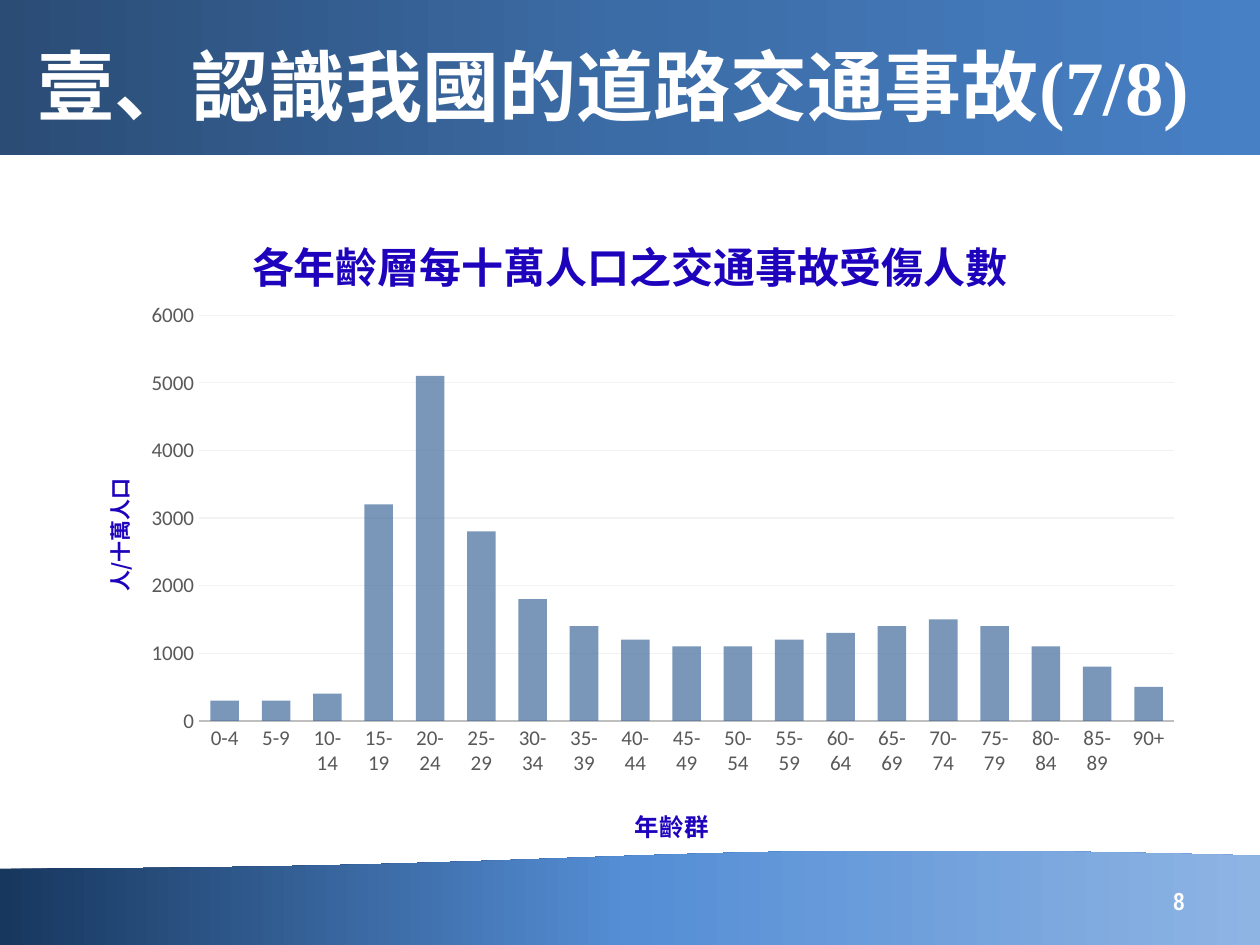
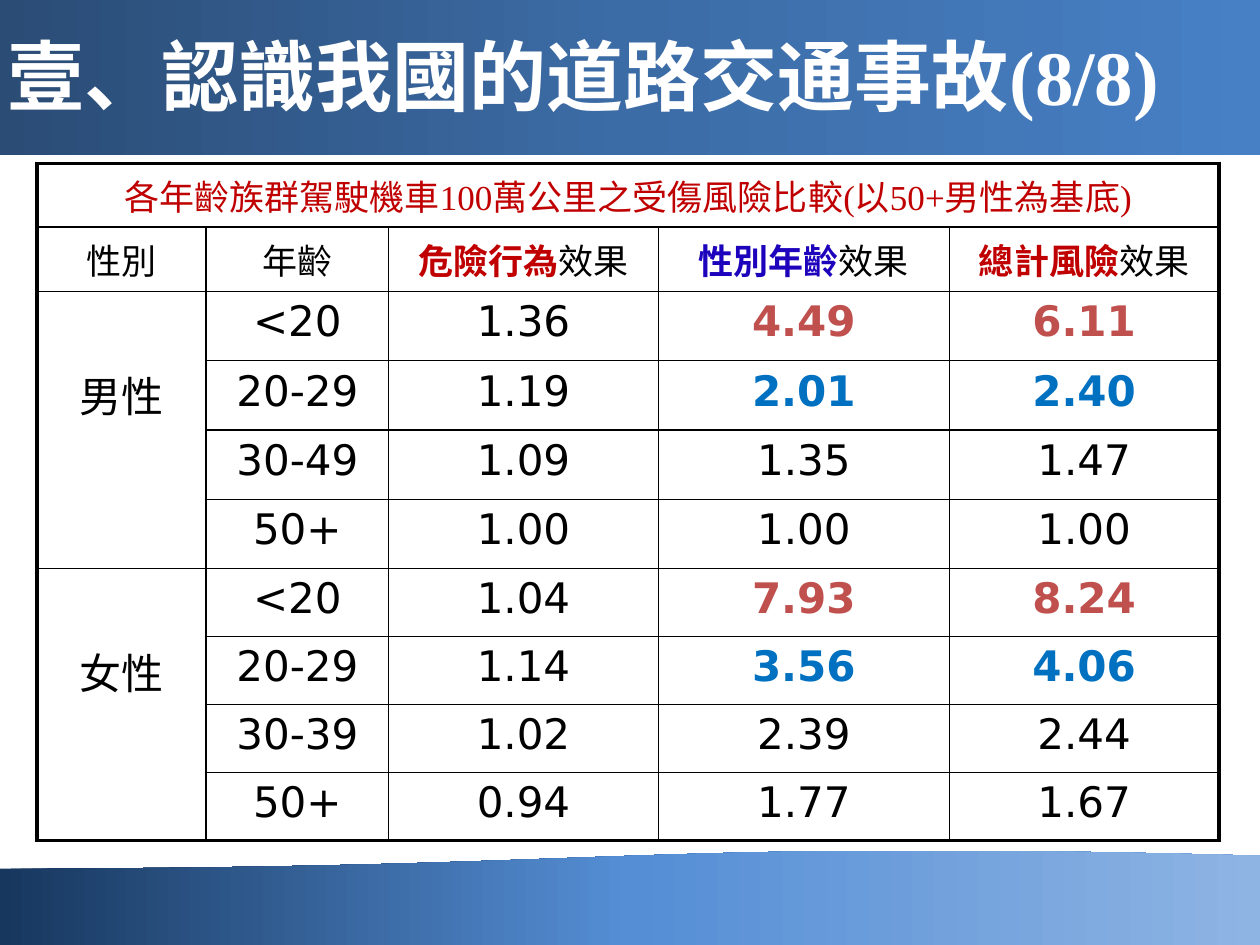
"""Build two slides on road accident injuries: a chart by age and a risk table."""
from pptx import Presentation
from pptx.chart.data import CategoryChartData as ChartData
from pptx.dml.color import RGBColor
from pptx.enum.chart import XL_CHART_TYPE as ChartType, XL_TICK_MARK as TickMark
from pptx.enum.shapes import MSO_SHAPE as Preset
from pptx.enum.text import MSO_ANCHOR as Anchor, MSO_AUTO_SIZE as AutoSize, PP_ALIGN as Align
from pptx.oxml import parse_xml
from pptx.oxml.ns import nsdecls, qn
from pptx.util import Cm, Pt

COLORS = {
    "white": "FFFFFF", "black": "000000", "label": "595959", "axis": "BFBFBF",
    "grid": "F2F2F2", "column": "426B9D", "indigo": "1E03BD", "crimson": "C00000",
    "red": "C0504D", "blue": "0070C0",
}
CJK = "Noto Sans CJK SC"
TITLE_FORMAT = {"size": Pt(44), "bold": True, "name": CJK, "color": "white"}


def style(font, formats):
    for attribute, value in formats.items():
        if attribute == "color":
            font.color.rgb = RGBColor.from_string(COLORS[value])
        else:
            setattr(font, attribute, value)
    font._element.append(parse_xml(f'<a:ea {nsdecls("a")} typeface="{CJK}"/>'))


def set_layout(element, index, values, target=""):
    for previous in element.findall(qn("c:layout")):
        element.remove(previous)
    modes = "".join(f'<c:{axis}Mode val="edge"/>' for axis in "xy")
    sizes = "".join(f'<c:{key} val="{value}"/>' for key, value in zip("xywh", values))
    element.insert(index, parse_xml(
        f'<c:layout {nsdecls("c")}><c:manualLayout>{target}{modes}{sizes}'
        "</c:manualLayout></c:layout>"))


presentation = Presentation()
presentation.slide_width, presentation.slide_height = Cm(25.4), Cm(19.05)
title_only = presentation.slide_layouts[5]

slides = []
for page, left, top, width in (("(7/8)", 0.51, 0.53, 24.89), ("(8/8)", -0.1, 0.33, 25.5)):
    slide = presentation.slides.add_slide(title_only)
    title = slide.shapes.title
    title.left, title.top, title.width, title.height = Cm(left), Cm(top), Cm(width), Cm(2.36)
    frame = title.text_frame
    frame.auto_size, frame.vertical_anchor = AutoSize.NONE, Anchor.MIDDLE
    paragraph = frame.paragraphs[0]
    paragraph.alignment = Align.LEFT
    for text, name in (("壹、認識我國的道路交通事故", CJK), (page, "Times New Roman")):
        run = paragraph.add_run()
        run.text = text
        style(run.font, TITLE_FORMAT | {"name": name})
    slides.append(slide)
chart_slide, table_slide = slides

bands = (
    (Preset.FLOWCHART_DOCUMENT, 17.12, 1.96, 180, ("17375E", "558ED5", "8EB4E3")),
    (Preset.RECTANGLE, 0, 3.12, 0, ("2A4C75", "3C6CA6", "4780C5")),
)
master_tree = presentation.slide_master.shapes._spTree
for number, (preset, top, height, angle, stops) in enumerate(bands):
    band = chart_slide.shapes.add_shape(preset, 0, Cm(top), Cm(25.4), Cm(height))
    band.rotation = angle
    band.shadow.inherit = False
    stop_xml = "".join(
        f'<a:gs pos="{index * 50000}"><a:srgbClr val="{color}"/></a:gs>'
        for index, color in enumerate(stops))
    band._element.spPr.insert(2, parse_xml(
        f'<a:gradFill {nsdecls("a")} rotWithShape="1"><a:gsLst>{stop_xml}</a:gsLst>'
        f'<a:lin ang="{angle * 60000}" scaled="0"/></a:gradFill>'))
    band.line.fill.background()
    band._element.nvSpPr.cNvPr.set("id", str(20 + number))
    master_tree.insert(2 + number, band._element)

ages = [f"{start}-{start + 4}" for start in range(0, 90, 5)] + ["90+"]
injuries = (300, 300, 400, 3200, 5100, 2800, 1800, 1400, 1200, 1100, 1100, 1200, 1300,
            1400, 1500, 1400, 1100, 800, 500)
chart_data = ChartData()
chart_data.categories = ages
chart_data.add_series("Series 1", injuries)
chart = chart_slide.shapes.add_chart(
    ChartType.COLUMN_CLUSTERED, Cm(1.27), Cm(3.94), Cm(22.86), Cm(13.41), chart_data).chart
chart.has_legend = False
style(chart.font, {"size": Pt(10), "name": "Calibri", "color": "black"})

plot = chart.plots[0]
plot.gap_width, plot.overlap, plot.vary_by_categories = 80, 25, False
column_fill = plot.series[0].format.fill
column_fill.solid()
column_fill.fore_color.rgb = RGBColor.from_string(COLORS["column"])
column_color = plot.series[0]._element.find(".//" + qn("a:srgbClr"))
column_color.append(parse_xml(f'<a:alpha {nsdecls("a")} val="70000"/>'))

ages_axis, rate_axis = chart.category_axis, chart.value_axis
for axis in (ages_axis, rate_axis):
    axis.major_tick_mark = axis.minor_tick_mark = TickMark.NONE
    style(axis.tick_labels.font, {"size": Pt(12), "name": "Calibri", "color": "label"})
rate_axis.minimum_scale, rate_axis.maximum_scale, rate_axis.major_unit = 0, 6000, 1000
rate_axis.format.line.fill.background()
for line, color, width in ((ages_axis.format.line, "axis", 1.25),
                           (rate_axis.major_gridlines.format.line, "grid", 0.75)):
    line.color.rgb = RGBColor.from_string(COLORS[color])
    line.width = Pt(width)

chart_titles = (
    (chart.chart_title, "各年齡層每十萬人口之交通事故受傷人數", 24, "Times New Roman", (0.16, 0.04)),
    (ages_axis.axis_title, "年齡群", 14, CJK, (0.5, 0.91)),
    (rate_axis.axis_title, "人/十萬人口", 12, CJK, (0.03, 0.42)),
)
for heading, text, size, name, position in chart_titles:
    heading.text_frame.text = text
    style(heading.text_frame.paragraphs[0].runs[0].font,
          {"size": Pt(size), "bold": True, "name": name, "color": "indigo"})
    set_layout(heading._element, 1, position)
rotated = rate_axis.axis_title._element.find(".//" + qn("a:bodyPr"))
rotated.set("rot", "-5400000")
rotated.set("vert", "horz")
set_layout(chart._chartSpace.find(".//" + qn("c:plotArea")), 0, (0.12, 0.18, 0.86, 0.61),
           '<c:layoutTarget val="inner"/>')

number_box = chart_slide.shapes.add_textbox(Cm(18.21), Cm(17.65), Cm(5.92), Cm(1.02))
number_box.text_frame.word_wrap = True
number_box.text_frame.vertical_anchor = Anchor.MIDDLE
paragraph = number_box.text_frame.paragraphs[0]
paragraph.alignment = Align.RIGHT
run = paragraph.add_run()
run.text = "8"
style(run.font, {"size": Pt(14), "bold": True, "name": "Arial Narrow", "color": "white"})

column_widths = (1.34, 1.45, 2.14, 2.31, 2.14)
row_heights = (0.5, 0.51) + (0.55,) * 4 + (0.54,) * 4
risks = (
    ("男性", "<20", "1.36", "4.49", "6.11"),
    ("", "20-29", "1.19", "2.01", "2.40"),
    ("", "30-49", "1.09", "1.35", "1.47"),
    ("", "50+", "1.00", "1.00", "1.00"),
    ("女性", "<20", "1.04", "7.93", "8.24"),
    ("", "20-29", "1.14", "3.56", "4.06"),
    ("", "30-39", "1.02", "2.39", "2.44"),
    ("", "50+", "0.94", "1.77", "1.67"),
)
highlights = {"<20": "red", "20-29": "blue"}
effects = (("危險行為", "crimson"), ("性別年齡", "indigo"), ("總計風險", "crimson"))
plain = {"size": Pt(20), "bold": False, "name": "DejaVu Sans", "color": "black"}
caption = plain | {"name": "Times New Roman", "color": "crimson"}
cells = {
    (0, 0): [("各年齡族群駕駛機車100萬公里之受傷風險比較(以50+男性為基底)", caption)],
    (1, 0): [("性別", plain)],
    (1, 1): [("年齡", plain)],
}
for column, (effect, color) in enumerate(effects, 2):
    cells[1, column] = [(effect, plain | {"bold": True, "color": color}), ("效果", plain)]
for row, values in enumerate(risks, 2):
    for column, value in enumerate(values):
        formats = plain | {"size": Pt(24)}
        if column > 2 and values[1] in highlights:
            formats |= {"bold": True, "color": highlights[values[1]]}
        if value:
            cells[row, column] = [(value, formats)]

table = table_slide.shapes.add_table(
    len(row_heights), len(column_widths), Cm(0.75), Cm(3.3),
    Cm(2.54 * sum(column_widths)), Cm(2.54 * sum(row_heights))).table
table.first_row = table.horz_banding = False
for column, width in zip(table.columns, column_widths):
    column.width = Cm(2.54 * width)
for row, height in zip(table.rows, row_heights):
    row.height = Cm(2.54 * height)
table.cell(0, 0).merge(table.cell(0, 4))
for first_row in (2, 6):
    table.cell(first_row, 0).merge(table.cell(first_row + 3, 0))
    table.cell(first_row, 0).margin_top = Cm(1.45)

for row in range(len(row_heights)):
    for column in range(len(column_widths)):
        cell = table.cell(row, column)
        if not cell.is_spanned:
            outer_sides = {
                "L": column == 0,
                "R": column + cell.span_width == len(column_widths),
                "T": row == 0,
                "B": row + cell.span_height == len(row_heights),
            }
            for side, outer in outer_sides.items():
                cell._tc.get_or_add_tcPr().append(parse_xml(
                    f'<a:ln{side} {nsdecls("a")} w="{Pt(2.25 if outer else 1)}"><a:solidFill>'
                    f'<a:srgbClr val="{COLORS["black"]}"/></a:solidFill></a:ln{side}>'))
        cell.fill.background()
        paragraph = cell.text_frame.paragraphs[0]
        paragraph.alignment = Align.CENTER
        for text, formats in cells.get((row, column), ()):
            run = paragraph.add_run()
            run.text = text
            style(run.font, formats)

presentation.save("out.pptx")
